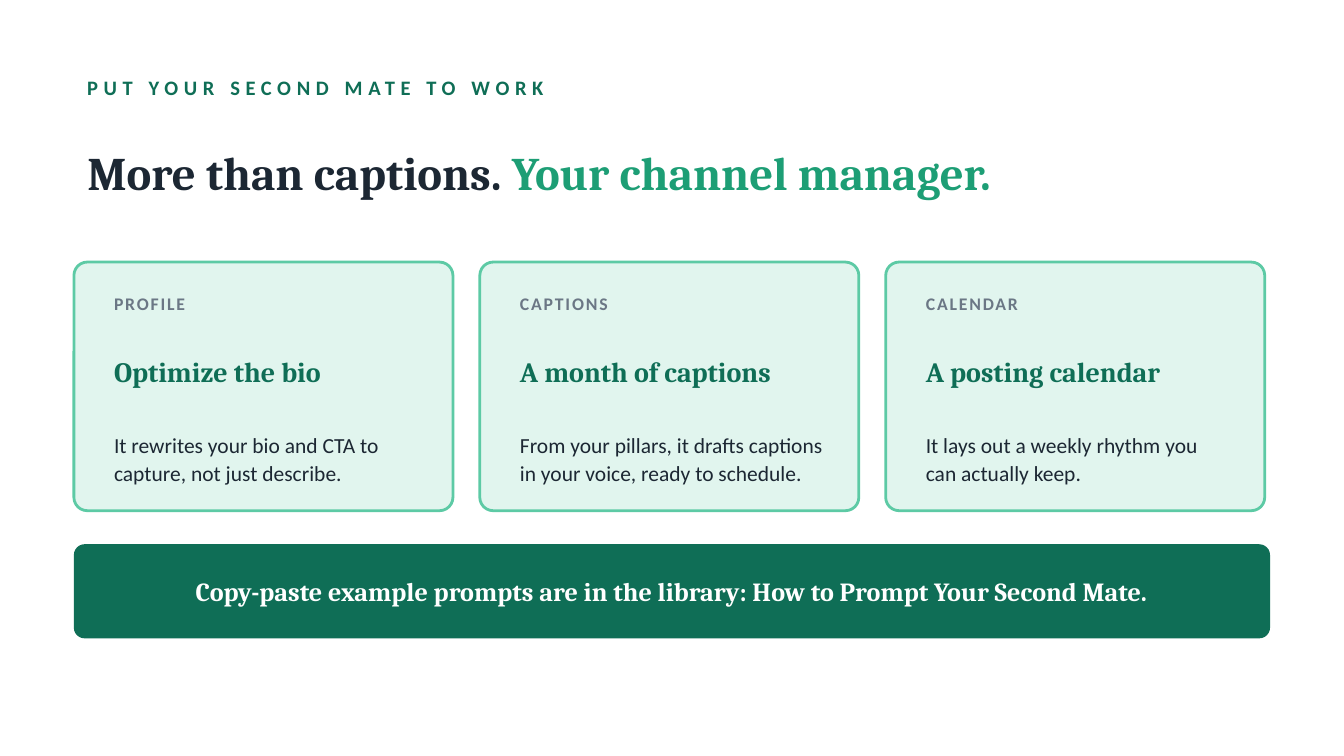
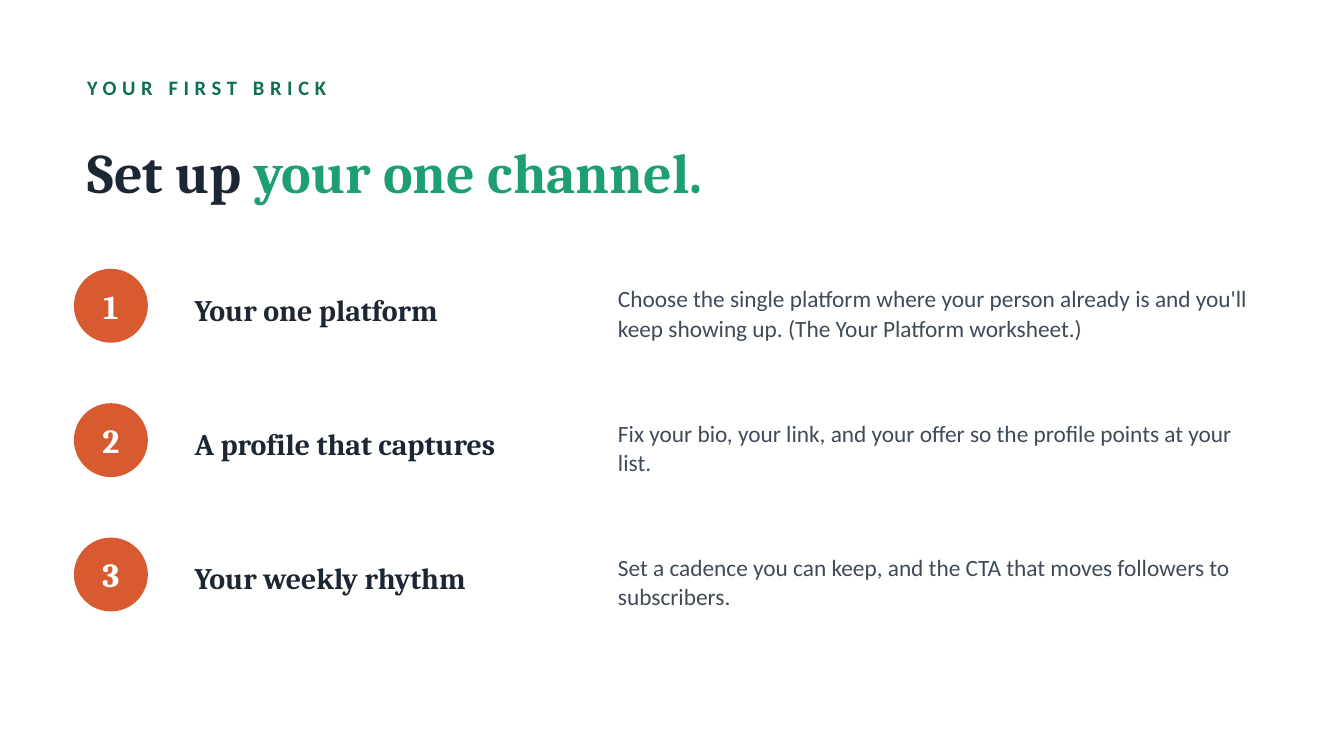
"""Build two slides on putting a channel manager to work and setting up one channel."""
from dataclasses import dataclass

from pptx import Presentation
from pptx import util as u
from pptx.dml import color as dml
from pptx.enum import shapes as es
from pptx.enum import text as et

COLORS = {
    "white": "FFFFFF",
    "ink": "1C2733",
    "slate": "3F4B59",
    "gray": "6B7785",
    "forest": "0F6E56",
    "green": "1D9E75",
    "mint": "5DCAA5",
    "pale": "E1F5EE",
    "orange": "D85A30",
}
SERIF, SANS = "Cambria", "Calibri"
LEFT, CONTENT_WIDTH = 39.6, 640.8
CARD_TOP, CARD_WIDTH, CARD_HEIGHT, CARD_PITCH = 140.4, 203.04, 133.2, 217.44
CARD_PAD, CARD_TEXT_WIDTH = 14.4, 176.4
STEP_TOP, STEP_PITCH, BADGE_SIZE = 140.4, 72, 39.6


@dataclass(frozen=True)
class Style:
    font: str
    size: float
    color: str
    bold: bool = True
    tracking: float = 0
    line_spacing: float | None = None
    align: et.PP_ALIGN = et.PP_ALIGN.LEFT


@dataclass(frozen=True)
class Area:
    left: float
    top: float
    width: float
    height: float


@dataclass(frozen=True)
class Card:
    label: str
    heading: str
    body: str


@dataclass(frozen=True)
class Step:
    heading: str
    body: str


EYEBROW = Style(SANS, 11, "forest", tracking=3)
CARD_LABEL = Style(SANS, 9.5, "gray", tracking=1)
CARD_HEADING = Style(SERIF, 15, "forest")
CARD_BODY = Style(SANS, 11.5, "ink", bold=False, line_spacing=1.08)
BANNER = Style(SERIF, 14, "white", align=et.PP_ALIGN.CENTER)
BADGE = Style(SERIF, 18, "white", align=et.PP_ALIGN.CENTER)
STEP_HEADING = Style(SERIF, 16, "ink")
STEP_BODY = Style(SANS, 12.5, "slate", bold=False, line_spacing=1.05)

CARDS = (
    Card("PROFILE", "Optimize the bio",
         "It rewrites your bio and CTA to capture, not just describe."),
    Card("CAPTIONS", "A month of captions",
         "From your pillars, it drafts captions in your voice, ready to schedule."),
    Card("CALENDAR", "A posting calendar",
         "It lays out a weekly rhythm you can actually keep."),
)
STEPS = (
    Step("Your one platform",
         "Choose the single platform where your person already is and you'll "
         "keep showing up. (The Your Platform worksheet.)"),
    Step("A profile that captures",
         "Fix your bio, your link, and your offer so the profile points at your list."),
    Step("Your weekly rhythm",
         "Set a cadence you can keep, and the CTA that moves followers to subscribers."),
)


def rgb(name: str) -> dml.RGBColor:
    """Look up a named colour."""
    return dml.RGBColor.from_string(COLORS[name])


def lengths(area: Area) -> tuple:
    """Give the four sides of an area as point lengths."""
    return u.Pt(area.left), u.Pt(area.top), u.Pt(area.width), u.Pt(area.height)


def add_span(para, text: str, style: Style, color: str = "") -> None:
    """Add one formatted run to a paragraph."""
    span = para.add_run()
    span.text = text
    span.font.name = style.font
    span.font.size = u.Pt(style.size)
    span.font.bold = style.bold
    span.font.color.rgb = rgb(color or style.color)
    if style.tracking:
        span.font._element.set("spc", str(int(style.tracking * 100)))


def start_text(box, style: Style):
    """Prepare the text frame of a shape and return its first paragraph."""
    frame = box.text_frame
    frame.word_wrap = True
    frame.auto_size = et.MSO_AUTO_SIZE.NONE
    frame.vertical_anchor = et.MSO_ANCHOR.MIDDLE
    para = frame.paragraphs[0]
    para.alignment = style.align
    if style.line_spacing:
        para.line_spacing = style.line_spacing
    return para


def add_text(page, area: Area, text: str, style: Style) -> None:
    """Add a text box with one run."""
    box = page.shapes.add_textbox(*lengths(area))
    add_span(start_text(box, style), text, style)


def add_panel(page, kind: es.MSO_SHAPE, area: Area, fill: str, line: str = "", radius: float = 0):
    """Add a flat filled shape, with a corner radius and outline if given."""
    panel = page.shapes.add_shape(kind, *lengths(area))
    panel.shadow.inherit = False
    panel.fill.solid()
    panel.fill.fore_color.rgb = rgb(fill)
    if line:
        panel.line.color.rgb = rgb(line)
        panel.line.width = u.Pt(1.5)
    else:
        panel.line.fill.background()
    if radius:
        panel.adjustments[0] = radius / min(area.width, area.height)
    return panel


def add_page(deck, eyebrow: str, lead: str, accent: str, title_size: float):
    """Add a slide with its eyebrow and two-colour title."""
    page = deck.slides.add_slide(deck.slide_layouts[5])
    title = page.shapes.title
    title.left, title.top, title.width, title.height = lengths(Area(LEFT, 61.2, CONTENT_WIDTH, 61.2))
    style = Style(SERIF, title_size, "ink")
    para = start_text(title, style)
    add_span(para, lead, style)
    add_span(para, accent, style, "green")
    add_text(page, Area(LEFT, 36, CONTENT_WIDTH, 21.6), eyebrow, EYEBROW)
    return page


def add_card(page, index: int, card: Card) -> None:
    """Add one card of the row."""
    left = LEFT + index * CARD_PITCH
    add_panel(page, es.MSO_SHAPE.ROUNDED_RECTANGLE,
              Area(left, CARD_TOP, CARD_WIDTH, CARD_HEIGHT), "pale", "mint", 7.2)
    lines = (
        (11.52, 21.6, card.label, CARD_LABEL),
        (33.12, 50.4, card.heading, CARD_HEADING),
        (84.96, 39.6, card.body, CARD_BODY),
    )
    for offset, height, text, style in lines:
        area = Area(left + CARD_PAD, CARD_TOP + offset, CARD_TEXT_WIDTH, height)
        add_text(page, area, text, style)


def add_step(page, index: int, step: Step) -> None:
    """Add one numbered step."""
    top = STEP_TOP + index * STEP_PITCH
    badge = add_panel(page, es.MSO_SHAPE.OVAL, Area(LEFT, top + 3.6, BADGE_SIZE, BADGE_SIZE), "orange")
    frame = badge.text_frame
    frame.margin_left = frame.margin_right = frame.margin_top = frame.margin_bottom = u.Pt(0)
    add_span(start_text(badge, BADGE), str(index + 1), BADGE)
    add_text(page, Area(97.2, top, 216, 50.4), step.heading, STEP_HEADING)
    add_text(page, Area(324, top, 360, 54), step.body, STEP_BODY)


def build_manager_page(deck) -> None:
    """Build the slide with three cards and a banner."""
    page = add_page(deck, "PUT YOUR SECOND MATE TO WORK",
                    "More than captions. ", "Your channel manager.", 25)
    for index, card in enumerate(CARDS):
        add_card(page, index, card)
    banner = add_panel(page, es.MSO_SHAPE.ROUNDED_RECTANGLE,
                       Area(LEFT, 291.6, CONTENT_WIDTH, 50.4), "forest", radius=5.75)
    add_span(start_text(banner, BANNER),
             "Copy-paste example prompts are in the library: How to Prompt Your Second Mate.", BANNER)


def build_channel_page(deck) -> None:
    """Build the slide with three numbered steps."""
    page = add_page(deck, "YOUR FIRST BRICK", "Set up ", "your one channel.", 30)
    for index, step in enumerate(STEPS):
        add_step(page, index, step)


def main() -> None:
    """Build and save the deck."""
    deck = Presentation()
    deck.slide_width, deck.slide_height = u.Pt(720), u.Pt(405)
    build_manager_page(deck)
    build_channel_page(deck)
    deck.save("out.pptx")


if __name__ == "__main__":
    main()
